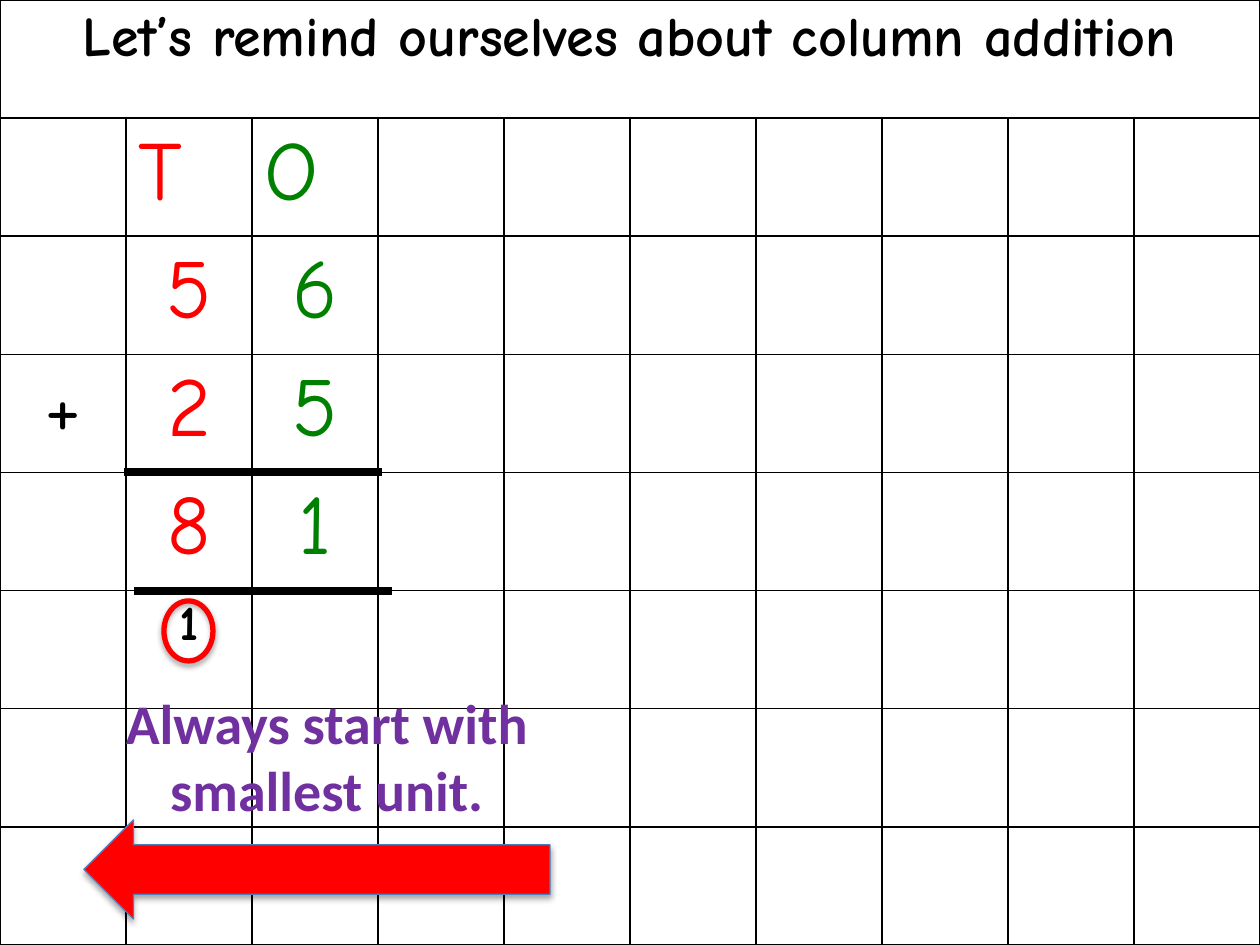
"""Builds a slide that revises column addition on a squared grid."""
from dataclasses import dataclass

from pptx import Presentation
from pptx.dml.color import RGBColor
from pptx.enum.shapes import MSO_CONNECTOR, MSO_SHAPE as Shape
from pptx.enum.text import MSO_AUTO_SIZE as AutoSize, PP_ALIGN as Align
from pptx.oxml import parse_xml
from pptx.oxml.ns import nsdecls
from pptx.util import Emu, Pt

PX = 914400 / 126
WIDTH, HEIGHT = 1260, 945
ROWS, COLUMNS = 8, 10


def px(length):
    return Emu(round(length * PX))


@dataclass(frozen=True)
class Theme:
    grid_font: str = "Comic Neue"
    note_font: str = "Calibri"
    ink: str = "000000"
    paper: str = "FFFFFF"
    tens: str = "FF0000"
    ones: str = "008000"
    note: str = "7030A0"
    arrow_edge: str = "4B7EBC"
    heading: int = 32
    digit: int = 48
    carry: int = 28


class SlideBuilder:
    def __init__(self, slide, theme):
        self.slide = slide
        self.theme = theme

    def set_text(self, frame, text, size, color, font, bold=False, align=Align.CENTER):
        paragraph = frame.paragraphs[0]
        paragraph.text = text
        paragraph.alignment = align
        style = paragraph.font
        style.name, style.size, style.bold = font, Pt(size), bold
        style.color.rgb = RGBColor.from_string(color)

    def grid(self, rows, columns):
        table = self.slide.shapes.add_table(
            rows, columns, 0, 0, px(WIDTH), px(HEIGHT)).table
        table.first_row = table.horz_banding = False
        for cell in table.iter_cells():
            cell.fill.solid()
            cell.fill.fore_color.rgb = RGBColor.from_string(self.theme.paper)
            properties = cell._tc.get_or_add_tcPr()
            for index, side in enumerate("LRTB"):
                properties.insert(index, parse_xml(
                    f'<a:ln{side} {nsdecls("a")} w="{Pt(1)}"><a:solidFill>'
                    f'<a:srgbClr val="{self.theme.ink}"/></a:solidFill></a:ln{side}>'))
        return table

    def cell(self, table, row, column, text, color, size=None, bold=False,
             align=Align.CENTER):
        self.set_text(table.cell(row, column).text_frame, text,
                      size or self.theme.digit, color, self.theme.grid_font, bold, align)

    def rule(self, left, y, width):
        line = self.slide.shapes.add_connector(
            MSO_CONNECTOR.STRAIGHT, px(left), px(y), px(left + width), px(y))
        line.line.color.rgb = RGBColor.from_string(self.theme.ink)
        line.line.width = Pt(4.5)
        line._element.spPr.append(parse_xml(f'<a:effectLst {nsdecls("a")}/>'))

    def note(self, text, left, top, width, height):
        frame = self.slide.shapes.add_textbox(
            px(left), px(top), px(width), px(height)).text_frame
        frame.word_wrap = True
        frame.auto_size = AutoSize.SHAPE_TO_FIT_TEXT
        self.set_text(frame, text, self.theme.heading, self.theme.note,
                      self.theme.note_font, bold=True)

    def marker(self, kind, left, top, width, height, edge, edge_width, fill=None):
        shape = self.slide.shapes.add_shape(
            kind, px(left), px(top), px(width), px(height))
        if fill:
            shape.fill.solid()
            shape.fill.fore_color.rgb = RGBColor.from_string(fill)
        else:
            shape.fill.background()
        shape.line.color.rgb = RGBColor.from_string(edge)
        shape.line.width = Pt(edge_width)
        shape._element.spPr.append(parse_xml(
            f'<a:effectLst {nsdecls("a")}><a:outerShdw blurRad="40000" dist="23000" '
            f'dir="5400000" rotWithShape="0"><a:srgbClr val="{self.theme.ink}">'
            '<a:alpha val="35000"/></a:srgbClr></a:outerShdw></a:effectLst>'))


def main():
    deck = Presentation()
    deck.slide_width, deck.slide_height = px(WIDTH), px(HEIGHT)
    theme = Theme()
    builder = SlideBuilder(deck.slides.add_slide(deck.slide_layouts[6]), theme)

    sum_grid = builder.grid(ROWS, COLUMNS)
    sum_grid.cell(0, 0).merge(sum_grid.cell(0, COLUMNS - 1))
    builder.cell(sum_grid, 0, 0, "Let’s remind ourselves about column addition",
                 theme.ink, theme.heading, bold=True)
    for row, place_values in enumerate(("TO", "56", "25", "81"), start=1):
        align = Align.LEFT if row == 1 else Align.CENTER
        for column, color in enumerate((theme.tens, theme.ones), start=1):
            builder.cell(sum_grid, row, column, place_values[column - 1], color,
                         align=align)
    builder.cell(sum_grid, 3, 0, "+", theme.ink)
    builder.cell(sum_grid, 5, 1, "1", theme.ink, theme.carry, bold=True)

    for left, y in ((134, 591), (124, 472)):
        builder.rule(left, y, 258)
    builder.note("Always start with smallest unit.", 94, 682, 466, 149)
    builder.marker(Shape.LEFT_ARROW, 84, 820, 466, 99, theme.arrow_edge, 0.75, theme.tens)
    builder.marker(Shape.OVAL, 164, 601, 49, 60, theme.tens, 3)

    deck.save("out.pptx")


if __name__ == "__main__":
    main()
